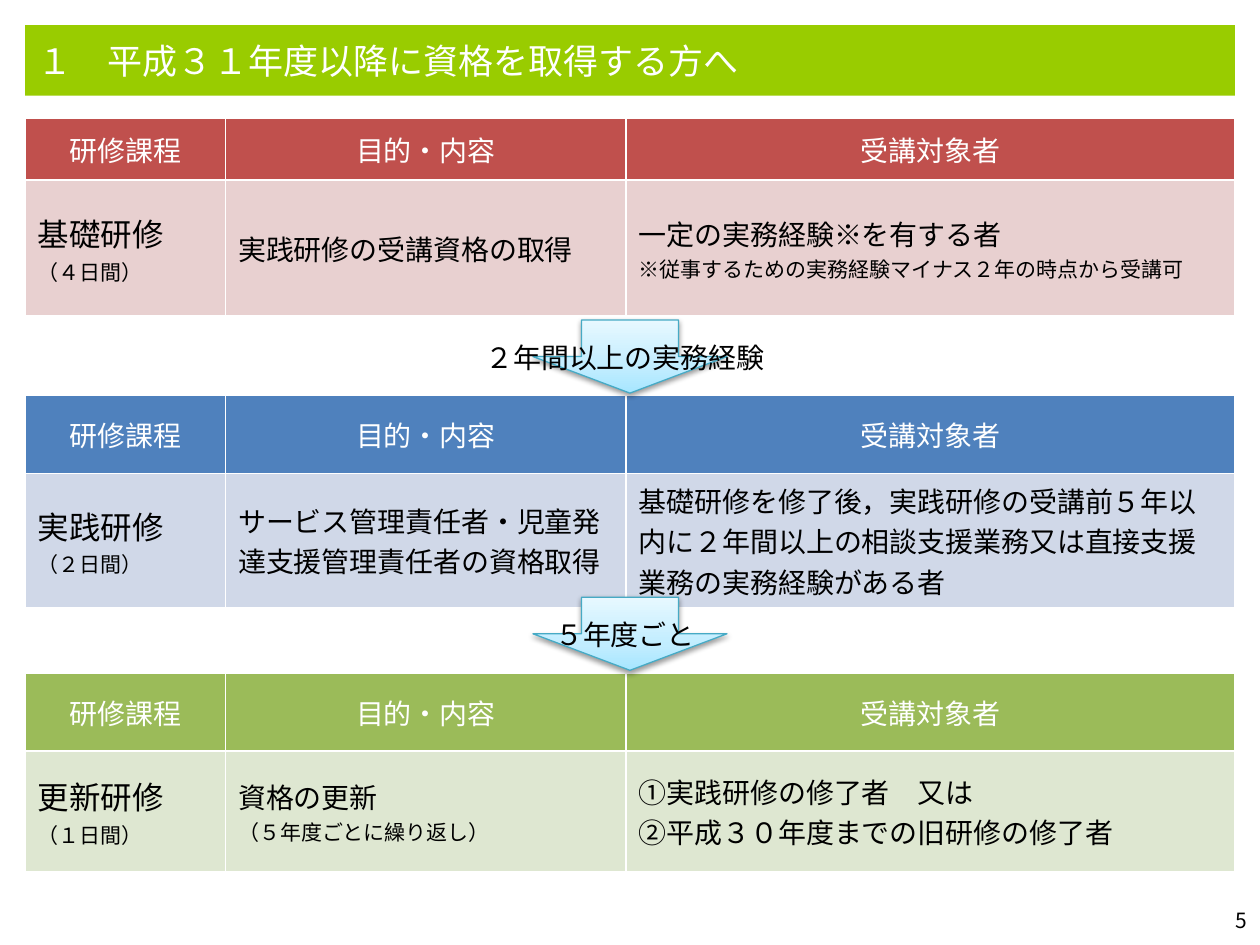
from pptx import Presentation
from pptx import util as u
from pptx.dml.color import RGBColor
from pptx.enum import shapes, text
from pptx.oxml import parse_xml
from pptx.oxml.ns import nsdecls, qn

FONT = "Noto Sans CJK JP"
LEFT, WIDTH = 0.2, 9.6
COLS = (1.59, 3.18, 4.83)
HEADERS = ("研修課程", "目的・内容", "受講対象者")
COURSES = [
    (0.94, (0.49, 1.08), "C0504D", "E8D0D0", (
        [("基礎研修", 18), ("（４日間）", 12)],
        [("実践研修の受講資格の取得", 16)],
        [("一定の実務経験※を有する者", 16),
         ("※従事するための実務経験マイナス２年の時点から受講可", 12)])),
    (3.14, (0.62, 0.96), "4F81BD", "D0D8E8", (
        [("実践研修", 18), ("（２日間）", 12)],
        [("サービス管理責任者・児童発達支援管理責任者の資格取得", 16)],
        [("基礎研修を修了後，実践研修の受講前５年以内に２年間以上の相談支援業務"
          "又は直接支援業務の実務経験がある者", 16)])),
    (5.34, (0.62, 0.96), "9BBB59", "DEE7D1", (
        [("更新研修", 18), ("（１日間）", 12)],
        [("資格の更新", 16), ("（５年度ごとに繰り返し）", 12)],
        [("①実践研修の修了者　又は　", 16),
         ("②平成３０年度までの旧研修の修了者", 16)])),
]
STEPS = [(2.54, "２年間以上の実務経験"), (4.74, "５年度ごと")]


def rgb(value):
    return RGBColor.from_string(value)


def inches(*values):
    return [u.Inches(v) for v in values]


def write(tf, lines, color="000000", align=text.PP_ALIGN.LEFT):
    tf.text = "\n".join(line for line, _ in lines)
    for p, (_, size) in zip(tf.paragraphs, lines):
        p.alignment = align
        for r in p.runs:
            r.font.size = u.Pt(size)
            r.font.bold = False
            r.font.name = FONT
            r.font.color.rgb = rgb(color)
            ea = r._r.get_or_add_rPr().makeelement(qn("a:ea"), {"typeface": FONT})
            r.font._element.find(qn("a:latin")).addnext(ea)


def add_title(s, x, y, w, h):
    sp = s.shapes.title
    sp.left, sp.top, sp.width, sp.height = inches(x, y, w, h)
    sp.fill.solid()
    sp.fill.fore_color.rgb = rgb("99CC00")
    tf = sp.text_frame
    tf.auto_size = text.MSO_AUTO_SIZE.NONE
    tf.vertical_anchor = text.MSO_ANCHOR.MIDDLE
    write(tf, [("１　平成３１年度以降に資格を取得する方へ", 20)], "FFFFFF")


def add_label(s, x, y, w, h, label, size, align):
    tf = s.shapes.add_textbox(*inches(x, y, w, h)).text_frame
    tf.word_wrap = True
    tf.vertical_anchor = text.MSO_ANCHOR.MIDDLE
    write(tf, [(label, size)], align=align)


def fill_cell(cell, lines, fill, color, align):
    cell.fill.solid()
    cell.fill.fore_color.rgb = rgb(fill)
    cell.vertical_anchor = text.MSO_ANCHOR.MIDDLE
    write(cell.text_frame, lines, color, align)


def add_course(s, x, y, w, heights, dark, pale, body):
    table = s.shapes.add_table(2, len(COLS), *inches(x, y, w, sum(heights))).table
    for row, height in zip(table.rows, heights):
        row.height = u.Inches(height)
    for i, width in enumerate(COLS):
        table.columns[i].width = u.Inches(width)
        fill_cell(table.cell(0, i), [(HEADERS[i], 16)], dark, "FFFFFF",
                  text.PP_ALIGN.CENTER)
        fill_cell(table.cell(1, i), body[i], pale, "000000", text.PP_ALIGN.LEFT)


def add_arrow(s, x, y, w, h):
    sp = s.shapes.add_shape(shapes.MSO_SHAPE.DOWN_ARROW, *inches(x, y, w, h))
    sp.line.color.rgb = rgb("46AAC5")
    sp.line.width = u.Pt(0.75)
    stops = "".join(
        f'<a:gs pos="{pos * 1000}"><a:srgbClr val="{color}"/></a:gs>'
        for pos, color in ((0, "A7E6FF"), (35, "C1EDFF"), (100, "E7F8FF")))
    sp._element.spPr.find(qn("a:prstGeom")).addnext(parse_xml(
        f'<a:gradFill {nsdecls("a")} rotWithShape="1"><a:gsLst>{stops}</a:gsLst>'
        '<a:lin ang="16200000" scaled="1"/></a:gradFill>'))
    sp._element.spPr.append(parse_xml(
        f'<a:effectLst {nsdecls("a")}><a:outerShdw blurRad="{u.Pt(3.1)}" '
        f'dist="{u.Pt(1.6)}" dir="5400000" rotWithShape="0"><a:srgbClr val="000000">'
        '<a:alpha val="38000"/></a:srgbClr></a:outerShdw></a:effectLst>'))


def add_step(s, y, label):
    add_arrow(s, 4.23, y, 1.54, 0.58)
    add_label(s, 3.65, y + 0.11, 2.62, 0.37, label, 16, text.PP_ALIGN.CENTER)


def main():
    prs = Presentation()
    prs.slide_width, prs.slide_height = inches(10, 7.5)
    s = prs.slides.add_slide(prs.slide_layouts[5])
    add_title(s, LEFT, 0.2, WIDTH, 0.56)
    for y, heights, dark, pale, body in COURSES:
        add_course(s, LEFT, y, WIDTH, heights, dark, pale, body)
    for y, label in STEPS:
        add_step(s, y, label)
    add_label(s, 7.75, 7.1, 2.25, 0.4, "5", 12, text.PP_ALIGN.RIGHT)
    prs.save("out.pptx")


if __name__ == "__main__":
    main()
